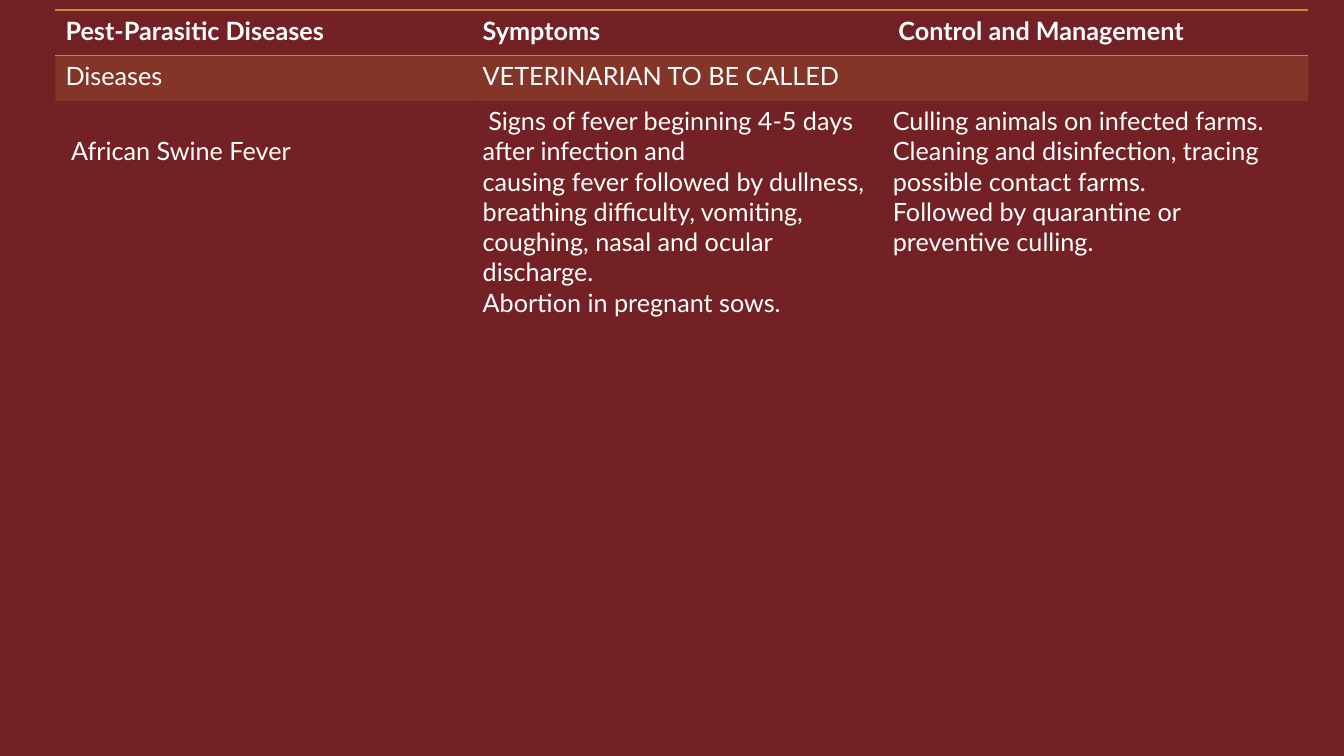
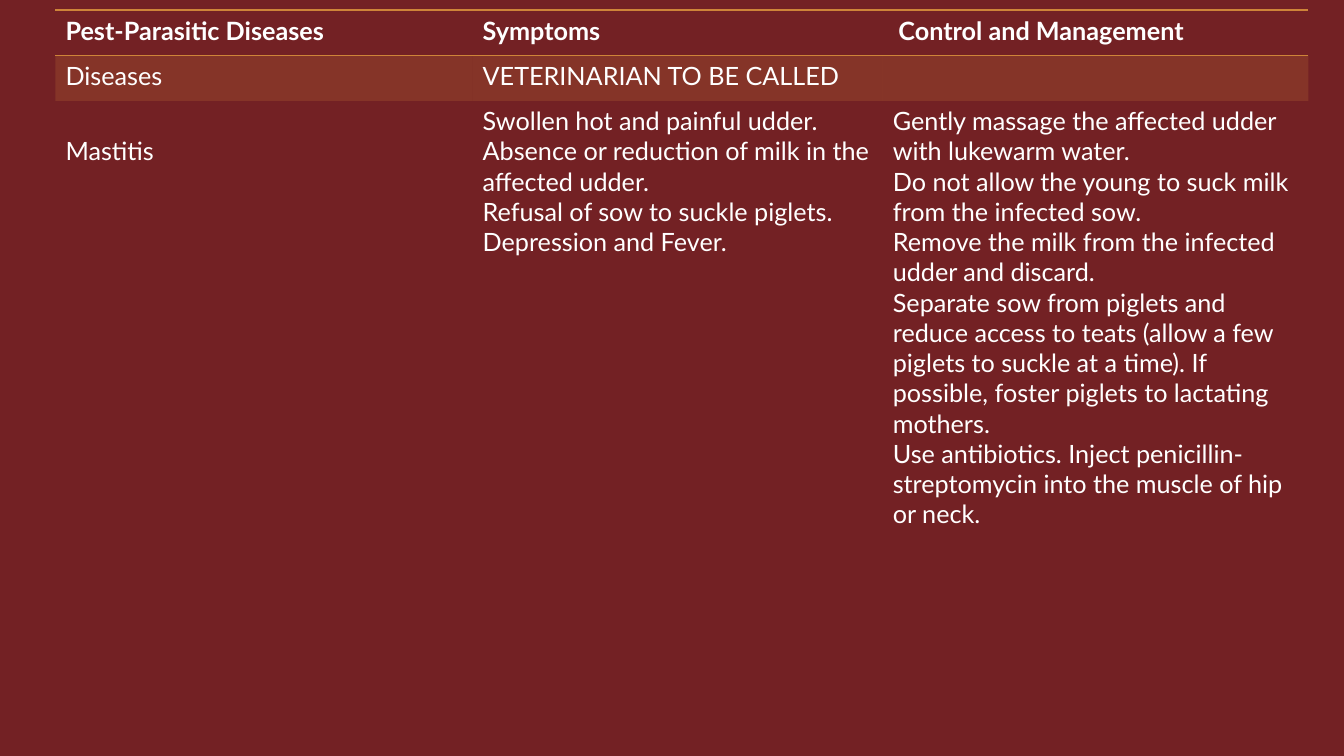
from lxml.etree import SubElement
from pptx import Presentation
from pptx.dml.color import RGBColor
from pptx.oxml import parse_xml
from pptx.oxml.ns import nsdecls, qn
from pptx.util import Pt

BACKGROUND, GOLD, WHITE = "732124", "CE8439", "FFFFFF"
COLUMN_WIDTHS = [298, 293, 304]
ROW_HEIGHTS = [32.4, 32.4, 521]
NO_GRID_STYLE = "{2D5ABB26-0587-4C30-8999-92F81FD0307C}"
LINE_HEIGHT = 21.6
SMALL_INDENT = 4
GLUE = chr(160)

HEADINGS = ["Pest-Parasitic Diseases", "Symptoms", "Control and Management"]
NOTICE = ["Diseases", "VETERINARIAN TO BE CALLED", ""]
INDENTED = {"Control and Management", "African Swine Fever"}
DISEASES = [
    (
        ["African Swine Fever"],
        [
            f"Signs of{GLUE}fever{GLUE}beginning 4-5 days after infection and "
            f"causing{GLUE}fever{GLUE}followed by dullness, breathing difficulty, "
            "vomiting, coughing, nasal and ocular discharge.",
            "Abortion in pregnant sows.",
        ],
        [
            "Culling animals on infected farms.",
            "Cleaning and disinfection, tracing possible contact farms.",
            "Followed by quarantine or preventive culling.",
        ],
    ),
    (
        ["Mastitis"],
        [
            "Swollen hot and painful udder.",
            "Absence or reduction of milk in the affected udder.",
            "Refusal of sow to suckle piglets.",
            "Depression and Fever.",
        ],
        [
            "Gently massage the affected udder with lukewarm water.",
            "Do not allow the young to suck milk from the infected sow.",
            "Remove the milk from the infected udder and discard.",
            "Separate sow from piglets and reduce access to teats (allow a few "
            "piglets to suckle at a time). If possible, foster piglets to "
            "lactating mothers.",
            "Use antibiotics. Inject penicillin-streptomycin into the muscle "
            "of hip or neck.",
        ],
    ),
]


def color(value):
    return RGBColor.from_string(value)


def add_rules(cell, sides):
    for position, side in enumerate(sides):
        rule = parse_xml(
            f'<a:ln{side} {nsdecls("a")} w="{Pt(1)}"><a:solidFill>'
            f'<a:srgbClr val="{GOLD}"/></a:solidFill></a:ln{side}>'
        )
        cell._tc.get_or_add_tcPr().insert(position, rule)


prs = Presentation()
prs.slide_width, prs.slide_height = Pt(960), Pt(540)
master_fill = prs.slide_master.background.fill
master_fill.solid()
master_fill.fore_color.rgb = color(BACKGROUND)

for disease in DISEASES:
    slide = prs.slides.add_slide(prs.slide_layouts[6])
    table = slide.shapes.add_table(
        3, 3, Pt(39.6), Pt(7.2), Pt(sum(COLUMN_WIDTHS)), Pt(sum(ROW_HEIGHTS))
    ).table
    table.horz_banding = False
    table._tbl.tblPr.find(qn("a:tableStyleId")).text = NO_GRID_STYLE
    for column, width in zip(table.columns, COLUMN_WIDTHS):
        column.width = Pt(width)
    for row, height in zip(table.rows, ROW_HEIGHTS):
        row.height = Pt(height)

    contents = [[[text] for text in HEADINGS], [[text] for text in NOTICE], disease]
    for row_number, row_contents in enumerate(contents):
        for column_number, paragraphs in enumerate(row_contents):
            cell = table.cell(row_number, column_number)
            cell.text = "\n".join(paragraphs)
            for paragraph in cell.text_frame.paragraphs:
                if paragraph.text in INDENTED or paragraph.text.startswith("Signs"):
                    paragraph._p.get_or_add_pPr().set("indent", str(Pt(SMALL_INDENT)))
                text_format = {"name": "Lato", "size": Pt(18), "bold": row_number == 0}
                for attribute, value in text_format.items():
                    setattr(paragraph.font, attribute, value)
                paragraph.font.color.rgb = color(WHITE)
            if row_number == 1:
                cell.fill.solid()
                cell.fill.fore_color.rgb = color(GOLD)
                tint = cell._tc.tcPr.find(".//" + qn("a:srgbClr"))
                SubElement(tint, qn("a:alpha"), val="20000")
            else:
                cell.fill.background()
                add_rules(cell, "TB" if row_number == 0 else "B")
    table.cell(2, 0).margin_top = Pt(3.6 + LINE_HEIGHT)

prs.save("out.pptx")
